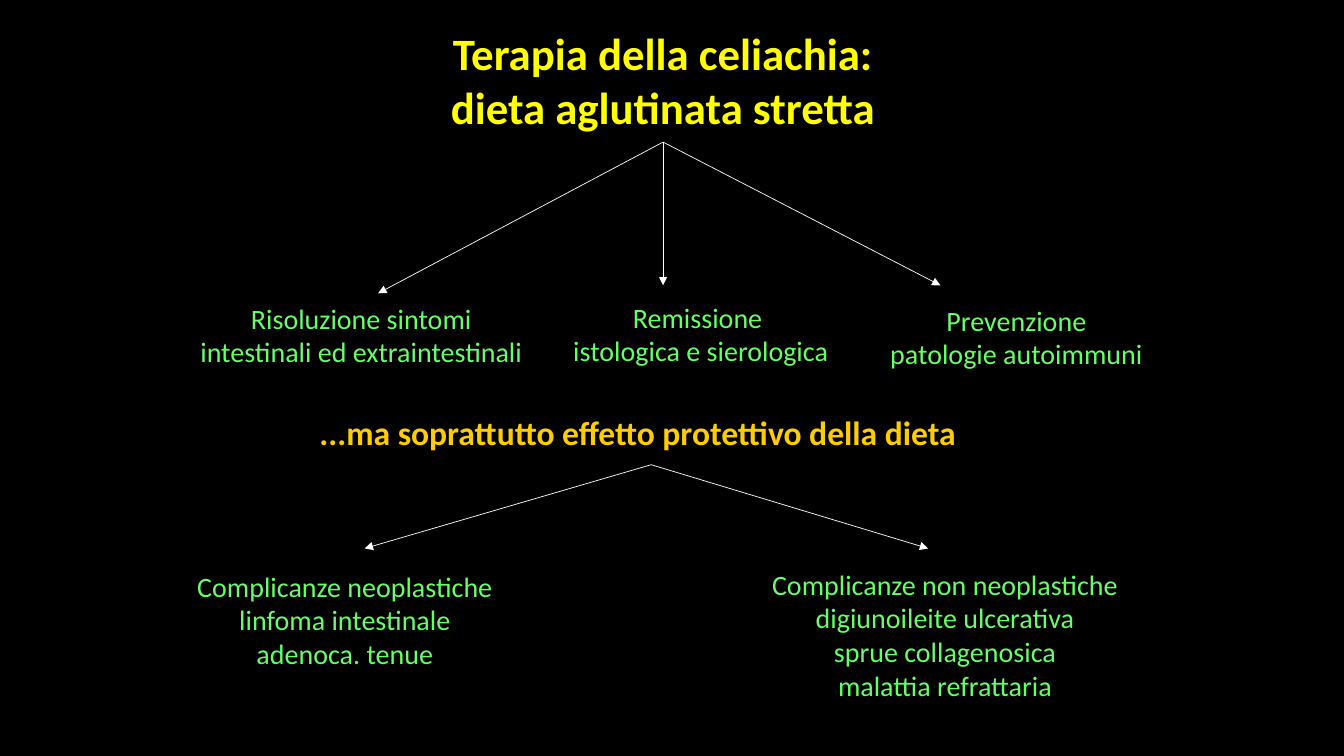
import pptx
import pptx.dml.color
import pptx.enum.shapes
import pptx.enum.text
import pptx.oxml
import pptx.oxml.ns
import pptx.shapes.base
import pptx.slide
import pptx.util
from dataclasses import dataclass

Cm = pptx.util.Cm
Align = pptx.enum.text.PP_ALIGN

COLORS = {
    "back": "000000",
    "title": "FFFF00",
    "item": "66FF66",
    "claim": "FFCC00",
    "arrow": "FFFFFF",
}


@dataclass
class Label:
    text: str
    left: float
    top: float
    width: float
    height: float
    color: str = "item"
    size: int = 20
    bold: bool = False
    align: Align = Align.CENTER


@dataclass
class Fan:
    """Arrows that spread from one start point to several tips."""
    start: tuple[float, float]
    tips: list[tuple[float, float]]


TITLE = Label("Terapia della celiachia:\ndieta aglutinata stretta",
              7.82, 0.53, 17.78, 2.97, "title", 32, True)

LABELS = [
    Label("Risoluzione sintomi\nintestinali ed extraintestinali",
          4.24, 7.47, 9.73, 1.96),
    Label("Remissione\n istologica e sierologica",
          13.77, 7.44, 7.62, 1.96),
    Label("Prevenzione\npatologie autoimmuni",
          22.02, 7.52, 7.19, 1.96),
    Label("...ma soprattutto effetto protettivo della dieta",
          7.8, 10.26, 17.5, 1.27, "claim", 24, True, Align.LEFT),
    Label("Complicanze neoplastiche\nlinfoma intestinale\nadenoca. tenue",
          4.7, 14.22, 7.98, 2.79),
    Label("Complicanze non neoplastiche\ndigiunoileite ulcerativa\n"
          "sprue collagenosica\nmalattia refrattaria",
          18.52, 14.17, 10.59, 4.65),
]

FANS = [
    Fan((16.71, 3.58), [(9.53, 7.39), (16.71, 7.19), (23.7, 7.19)]),
    Fan((16.41, 11.71), [(9.19, 13.82), (23.39, 13.82)]),
]


def rgb(name: str) -> pptx.dml.color.RGBColor:
    return pptx.dml.color.RGBColor.from_string(COLORS[name])


def fill_label(shape: pptx.shapes.base.BaseShape, label: Label) -> None:
    """Place the shape, then set and format its text."""
    shape.left, shape.top = Cm(label.left), Cm(label.top)
    shape.width, shape.height = Cm(label.width), Cm(label.height)
    frame = shape.text_frame
    frame.text = label.text
    frame.word_wrap = True
    frame.auto_size = pptx.enum.text.MSO_AUTO_SIZE.NONE
    frame.vertical_anchor = pptx.enum.text.MSO_ANCHOR.TOP
    for para in frame.paragraphs:
        para.alignment = label.align
        for run in para.runs:
            run.font.name = "Calibri"
            run.font.size = pptx.util.Pt(label.size)
            run.font.bold = label.bold
            run.font.color.rgb = rgb(label.color)


def add_label(slide: pptx.slide.Slide, label: Label) -> None:
    fill_label(slide.shapes.add_textbox(0, 0, 0, 0), label)


def add_fan(slide: pptx.slide.Slide, fan: Fan) -> None:
    for tip in fan.tips:
        arrow = slide.shapes.add_connector(
            pptx.enum.shapes.MSO_CONNECTOR.STRAIGHT,
            *map(Cm, fan.start + tip))
        arrow.line.color.rgb = rgb("arrow")
        arrow.line.width = pptx.util.Pt(0.5)
        head = pptx.oxml.parse_xml(
            f'<a:tailEnd {pptx.oxml.ns.nsdecls("a")} type="triangle"/>')
        arrow.line._get_or_add_ln().append(head)
        arrow._element.spPr.append(pptx.oxml.parse_xml(
            f'<a:effectLst {pptx.oxml.ns.nsdecls("a")}/>'))


def main() -> None:
    deck = pptx.Presentation()
    deck.slide_width, deck.slide_height = Cm(33.87), Cm(19.05)
    slide = deck.slides.add_slide(deck.slide_layouts.get_by_name("Title Only"))
    slide.background.fill.solid()
    slide.background.fill.fore_color.rgb = rgb("back")
    fill_label(slide.shapes.title, TITLE)
    for fan in FANS:
        add_fan(slide, fan)
    for label in LABELS:
        add_label(slide, label)
    deck.save("out.pptx")


if __name__ == "__main__":
    main()
